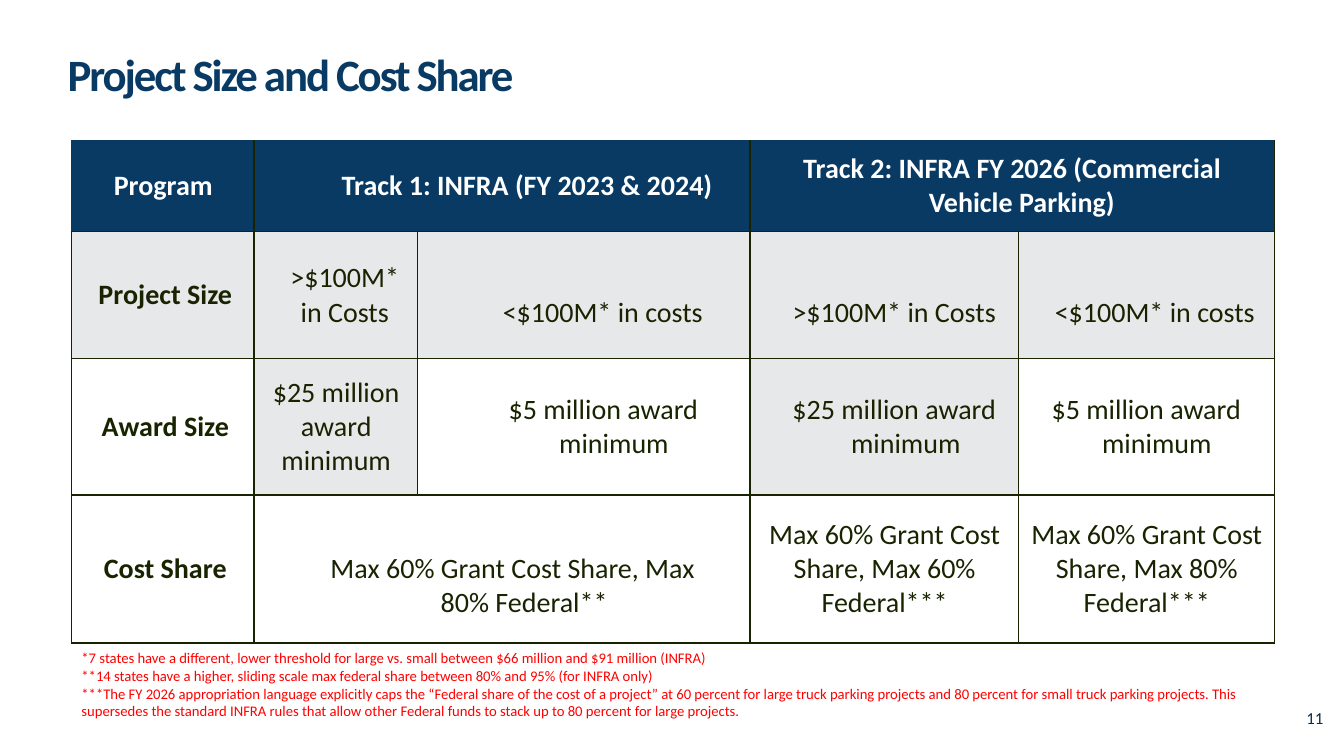
from lxml import etree
from pptx import Presentation
from pptx.dml.color import RGBColor
from pptx.enum.text import MSO_ANCHOR, PP_ALIGN
from pptx.oxml.ns import qn
from pptx.util import Inches, Pt

MIDDLE = MSO_ANCHOR.MIDDLE
CENTER = PP_ALIGN.CENTER
NAVY, INK, GRAY, WHITE = "083A64", "182300", "E7E8EA", "FFFFFF"


def style(para, size, color, bold=False):
    for span in para.runs:
        span.font.name = "Calibri"
        span.font.size = Pt(size)
        span.font.bold = bold
        span.font.color.rgb = RGBColor.from_string(color)


def add_text(left, top, width, height, lines, size, color, bold=False):
    box = page.shapes.add_textbox(Inches(left), Inches(top), Inches(width), Inches(height))
    frame = box.text_frame
    frame.word_wrap = True
    frame.text = "\n".join(lines)
    for para in frame.paragraphs:
        style(para, size, color, bold)
    return frame


deck = Presentation()
deck.slide_width, deck.slide_height = Inches(13.33), Inches(7.5)
page = deck.slides.add_slide(deck.slide_layouts[6])

# Slide number and title
add_text(12.86, 6.97, 0.47, 0.47, ["11"], 12, "062B4B")
title = add_text(0.67, 0.53, 10.46, 0.47, ["Project Size and Cost Share"], 32, NAVY, True)
title.margin_left = title.margin_right = title.margin_top = title.margin_bottom = 0
title.vertical_anchor = MIDDLE
title.paragraphs[0].line_spacing = 0.9
title.paragraphs[0].runs[0]._r.get_or_add_rPr().set("spc", "-150")

# Footnotes
add_text(0.71, 6.39, 11.92, 0.81, [
    "*7 states have a different, lower threshold for large vs. small between $66 million and $91 million (INFRA)",
    "**14 states have a higher, sliding scale max federal share between 80% and 95% (for INFRA only)",
    "***The FY 2026 appropriation language explicitly caps the “Federal share of the cost of a project” at "
    "60 percent for large truck parking projects and 80 percent for small truck parking projects. This "
    "supersedes the standard INFRA rules that allow other Federal funds to stack up to 80 percent for large projects.",
], 10.5, "FF0000")

# Table grid
column_widths = [1.81, 1.62, 3.3, 2.66, 2.54]
row_heights = [0.91, 1.26, 1.35, 1.47]
table = page.shapes.add_table(4, 5, Inches(0.71), Inches(1.39), Inches(11.92), Inches(5)).table
for column, width in zip(table.columns, column_widths):
    column.width = Inches(width)
for row, height in zip(table.rows, row_heights):
    row.height = Inches(height)
for row, column in [(0, 1), (0, 3), (3, 1)]:
    table.cell(row, column).merge(table.cell(row, column + 1))

# Fills and borders
gray_cells = [(1, column) for column in range(5)] + [(2, 1), (2, 3)]
for row in range(4):
    for column in range(5):
        cell = table.cell(row, column)
        fill = NAVY if row == 0 else GRAY if (row, column) in gray_cells else WHITE
        cell.fill.solid()
        cell.fill.fore_color.rgb = RGBColor.from_string(fill)
        cell.vertical_anchor = MIDDLE
        cell.margin_left = cell.margin_right = cell.margin_top = cell.margin_bottom = 0
        navy_sides = {"lnT": row == 0, "lnL": row == 0 and column == 0, "lnR": row == 0 and column == 4}
        properties = cell._tc.get_or_add_tcPr()
        for position, side in enumerate(["lnL", "lnR", "lnT", "lnB"]):
            line = etree.Element(qn("a:" + side), w=str(Pt(1)))
            solid = etree.SubElement(line, qn("a:solidFill"))
            color = NAVY if navy_sides.get(side) else INK
            etree.SubElement(solid, qn("a:srgbClr"), val=color)
            properties.insert(position, line)

# Cell texts: row, column, text, left margin, first-line indent, right margin, top inset
cell_texts = [
    (0, 0, "Program", 0.01, 0, 0, 0),
    (0, 1, "Track 1: INFRA (FY 2023 & 2024)", 0.73, -0.23, 0, 0),
    (0, 3, "Track 2: INFRA FY 2026 (Commercial Vehicle Parking)", 0.52, -0.19, 0.33, 0),
    (1, 0, "Project Size", 0.05, 0, 0, 0),
    (1, 1, ">$100M*\nin Costs", 0.18, 0, 0, 0),
    (1, 2, "<$100M* in costs", 0.38, 0, 0, 0.34),
    (1, 3, ">$100M* in Costs", 0.2, 0, 0, 0.34),
    (1, 4, "<$100M* in costs", 0.17, 0, 0, 0.34),
    (2, 0, "Award Size", 0.05, 0, 0, 0),
    (2, 1, "$25 million award minimum", 0.01, 0, 0, 0),
    (2, 2, "$5 million award minimum", 0.6, -0.21, 0, 0),
    (2, 3, "$25 million award minimum", 0.43, -0.23, 0, 0),
    (2, 4, "$5 million award minimum", 0.4, -0.21, 0.19, 0),
    (3, 0, "Cost Share", 0.05, 0, 0, 0),
    (3, 1, "Max 60% Grant Cost Share, Max 80% Federal**", 0.75, -0.23, 0.31, 0.34),
    (3, 3, "Max 60% Grant Cost Share, Max 60% Federal***", 0.01, 0, 0, 0),
    (3, 4, "Max 60% Grant Cost Share, Max 80% Federal***", 0.01, 0, 0, 0),
]
for row, column, text, left, indent, right, inset in cell_texts:
    cell = table.cell(row, column)
    cell.margin_top = Inches(inset)
    cell.margin_right = Inches(right)
    cell.text_frame.text = text
    for para in cell.text_frame.paragraphs:
        para.alignment = CENTER
        settings = para._p.get_or_add_pPr()
        settings.set("marL", str(Inches(left)))
        settings.set("indent", str(Inches(indent)))
        style(para, 20, WHITE if row == 0 else INK, row == 0 or column == 0)

deck.save("out.pptx")
